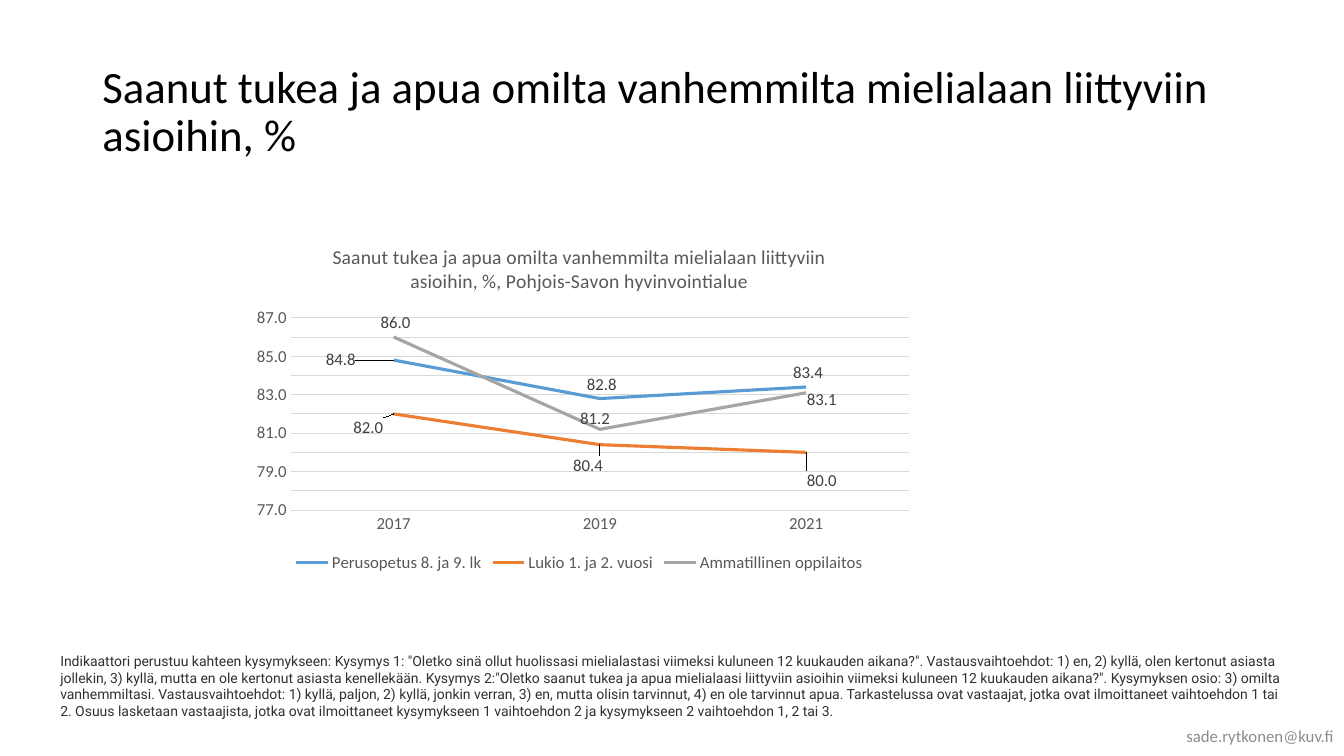
import copy

import lxml.etree
import pptx
import pptx.chart.data
import pptx.dml.color
import pptx.enum.chart
import pptx.enum.text
import pptx.oxml
import pptx.oxml.ns
import pptx.util

NUMBER_FORMAT = r"#\ ##0.0"
TITLE = "Saanut tukea ja apua omilta vanhemmilta mielialaan liittyviin asioihin, %"
FOOTNOTE = (
    'Indikaattori perustuu kahteen kysymykseen: Kysymys 1: "Oletko sinä ollut huolissasi '
    'mielialastasi viimeksi kuluneen 12 kuukauden aikana?". Vastausvaihtoehdot: 1) en, 2) kyllä, '
    "olen kertonut asiasta jollekin, 3) kyllä, mutta en ole kertonut asiasta kenellekään. "
    'Kysymys 2:"Oletko saanut tukea ja apua mielialaasi liittyviin asioihin viimeksi kuluneen '
    '12 kuukauden aikana?". Kysymyksen osio: 3) omilta vanhemmiltasi. Vastausvaihtoehdot: '
    "1) kyllä, paljon, 2) kyllä, jonkin verran, 3) en, mutta olisin tarvinnut, 4) en ole tarvinnut "
    "apua. Tarkastelussa ovat vastaajat, jotka ovat ilmoittaneet vaihtoehdon 1 tai 2. Osuus "
    "lasketaan vastaajista, jotka ovat ilmoittaneet kysymykseen 1 vaihtoehdon 2 ja kysymykseen 2 "
    "vaihtoehdon 1, 2 tai 3."
)
YEARS = ["2017", "2019", "2021"]
# Name, values, colour, label shifts by point (shares of the chart size)
SERIES = [
    ("Perusopetus 8. ja 9. lk", (84.8, 82.8, 83.4), "5B9BD5", {0: (-0.08, 0.04)}),
    ("Lukio 1. ja 2. vuosi", (82, 80.4, 80), "ED7D31",
     {0: (-0.04, 0.08), 1: (-0.02, 0.1), 2: (0.02, 0.12)}),
    ("Ammatillinen oppilaitos", (86, 81.2, 83.1), "A5A5A5",
     {1: (-0.01, 0.01), 2: (0.02, 0.06)}),
]


def rgb(color):
    return pptx.dml.color.RGBColor.from_string(color)


def set_font(font, size, color, name="Calibri"):
    font.size = pptx.util.Pt(size)
    font.name = name
    font.bold = False
    font.color.rgb = rgb(color)


def set_line(line, color, width):
    line.color.rgb = rgb(color)
    line.width = pptx.util.Pt(width)


def add_text(slide, box, text, size, color, name="Calibri", middle=True, align=None, spacing=None):
    tf = slide.shapes.add_textbox(*map(pptx.util.Cm, box)).text_frame
    tf.word_wrap = True
    if middle:
        tf.vertical_anchor = pptx.enum.text.MSO_ANCHOR.MIDDLE
    p = tf.paragraphs[0]
    p.text = text
    p.alignment = align
    p.line_spacing = spacing
    set_font(p.font, size, color, name)


def make_layout(**values):
    """Return a manual chart layout holding the given settings."""
    layout = pptx.oxml.parse_xml(
        f"<c:layout {pptx.oxml.ns.nsdecls('c')}><c:manualLayout/></c:layout>")
    for tag, value in values.items():
        lxml.etree.SubElement(layout[0], pptx.oxml.ns.qn(f"c:{tag}"), val=str(value))
    return layout


def style_series(series, color, shifts):
    set_line(series.format.line, color, 2.25)
    series.smooth = False
    series.marker.style = pptx.enum.chart.XL_MARKER_STYLE.NONE
    labels = series.data_labels
    labels.show_value = True
    labels.number_format = NUMBER_FORMAT
    labels.number_format_is_linked = False
    moved = [series.points[i].data_label for i in shifts]
    for label in [labels, *moved]:
        set_font(label.font, 12, "404040")
        label.position = pptx.enum.chart.XL_LABEL_POSITION.ABOVE
    # Moved labels need a layout and their own number format
    for idx in series._element.xpath("c:dLbls/c:dLbl/c:idx"):
        dx, dy = shifts[int(idx.get("val"))]
        idx.addnext(lxml.etree.Element(
            pptx.oxml.ns.qn("c:numFmt"), formatCode=NUMBER_FORMAT, sourceLinked="0"))
        idx.addnext(make_layout(x=dx, y=dy))


def style_axes(chart):
    for axis in (chart.category_axis, chart.value_axis):
        axis.major_tick_mark = pptx.enum.chart.XL_TICK_MARK.NONE
        axis.minor_tick_mark = pptx.enum.chart.XL_TICK_MARK.NONE
        set_font(axis.tick_labels.font, 12, "595959")
    set_line(chart.category_axis.format.line, "D9D9D9", 0.75)
    axis = chart.value_axis
    axis.minimum_scale, axis.maximum_scale = 77, 87
    axis.major_unit, axis.minor_unit = 2, 1
    axis.format.line.fill.background()
    axis.tick_labels.number_format = NUMBER_FORMAT
    axis.tick_labels.number_format_is_linked = False
    # Minor gridlines take the look of the major ones
    set_line(axis.major_gridlines.format.line, "D9D9D9", 0.75)
    axis.has_minor_gridlines = True
    major, minor = axis._element.xpath("c:majorGridlines | c:minorGridlines")
    minor.append(copy.deepcopy(major[0]))


def add_line_chart(slide, box):
    data = pptx.chart.data.CategoryChartData(number_format=NUMBER_FORMAT)
    data.categories = YEARS
    for name, values, *_ in SERIES:
        data.add_series(name, values)
    chart = slide.shapes.add_chart(
        pptx.enum.chart.XL_CHART_TYPE.LINE, *map(pptx.util.Cm, box), data).chart
    set_font(chart.font, 12, "000000")
    # Title and legend
    p = chart.chart_title.text_frame.paragraphs[0]
    p.text = TITLE + ", Pohjois-Savon hyvinvointialue"
    set_font(p.font, 14, "595959")
    chart.has_legend = True
    chart.legend.position = pptx.enum.chart.XL_LEGEND_POSITION.BOTTOM
    chart.legend.include_in_layout = False
    set_font(chart.legend.font, 12, "595959")
    # Plot area
    plot = chart.plots[0]
    plot.vary_by_categories = False
    for series, (_, _, color, shifts) in zip(plot.series, SERIES):
        style_series(series, color, shifts)
    style_axes(chart)
    area = chart._chartSpace.xpath("c:chart/c:plotArea")[0]
    for old in area.xpath("c:layout"):
        area.remove(old)
    area.insert(0, make_layout(layoutTarget="inner", xMode="edge", yMode="edge",
                               x=0.08, y=0.26, w=0.9, h=0.55))


def main():
    prs = pptx.Presentation()
    prs.slide_width, prs.slide_height = pptx.util.Cm(33.87), pptx.util.Cm(19.05)
    slide = prs.slides.add_slide(prs.slide_layouts[6])
    # Heading
    add_text(slide, (2.33, 1.01, 29.21, 3.68), TITLE, 32, "000000", spacing=0.9)
    # Contact
    add_text(slide, (26.04, 18.03, 11.43, 1.02), "sade.rytkonen@kuv.fi", 12, "8C8C8C",
             align=pptx.enum.text.PP_ALIGN.CENTER)
    # Footnote
    add_text(slide, (1.27, 16.31, 31.32, 1.96), FOOTNOTE, 10, "303030", "Roboto", middle=False)
    # Chart
    add_line_chart(slide, (5.94, 5.72, 17.32, 8.81))
    prs.save("out.pptx")


if __name__ == "__main__":
    main()
